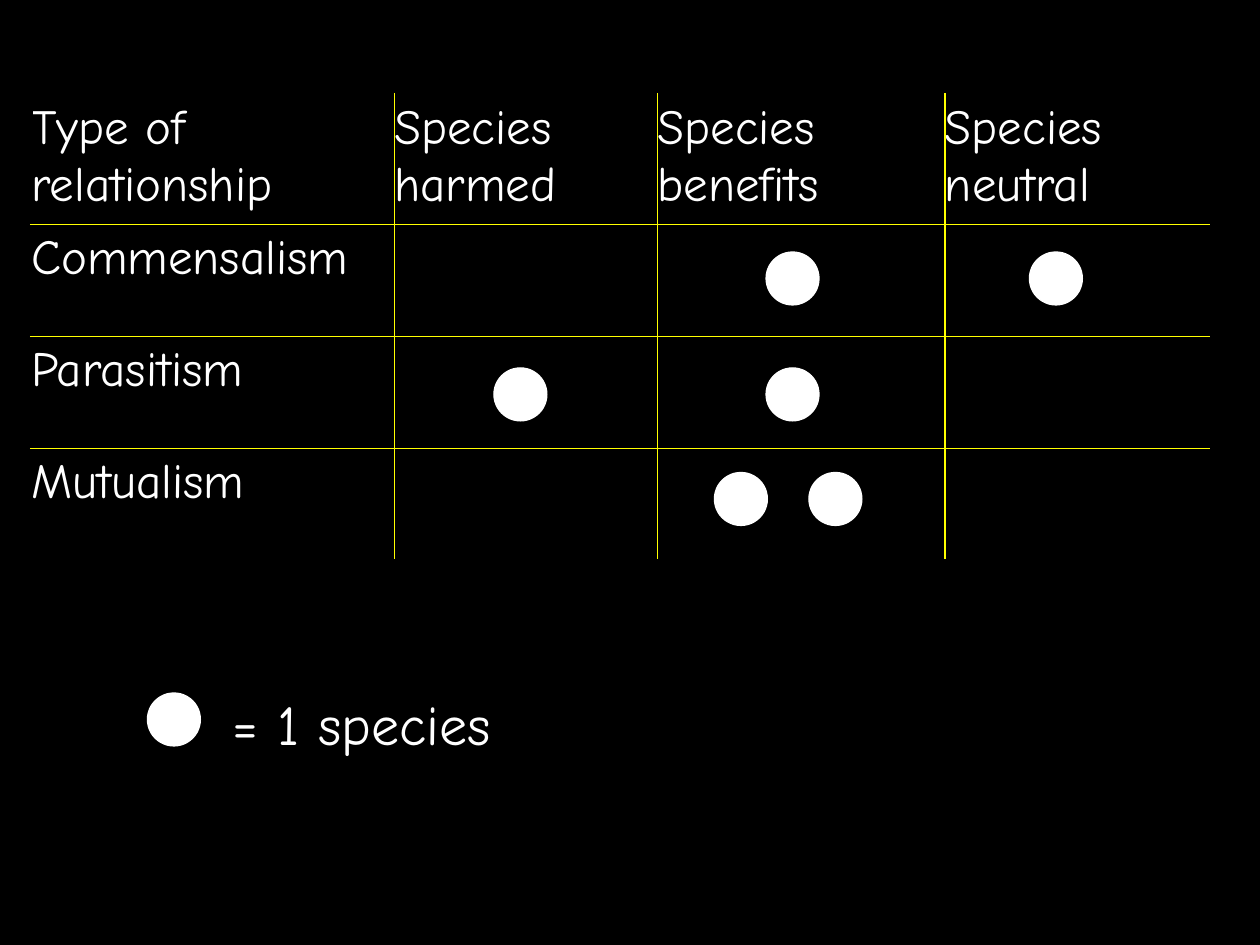
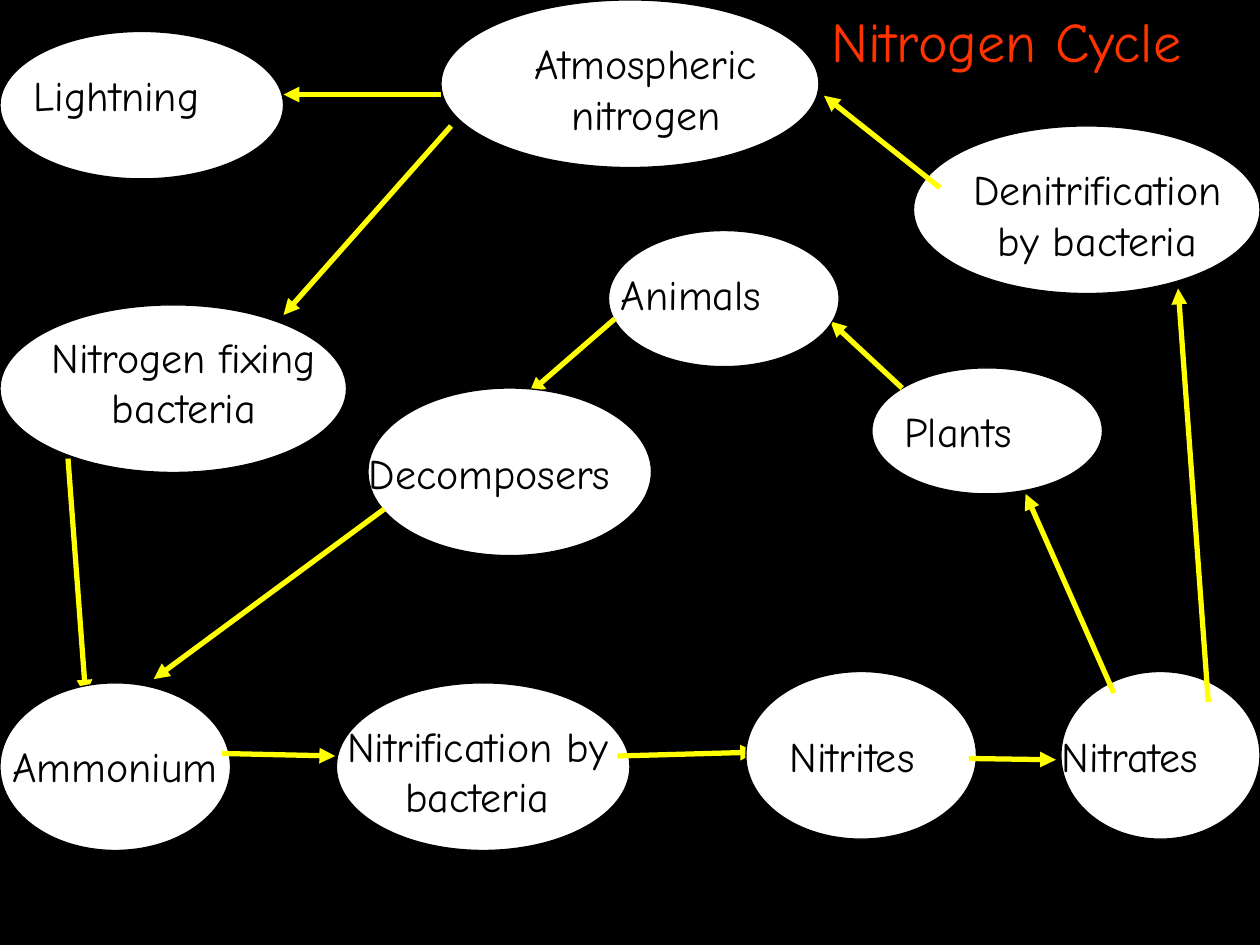
from lxml.etree import SubElement
from pptx import Presentation
from pptx.dml.color import RGBColor
from pptx.enum.shapes import MSO_CONNECTOR as CONNECTOR, MSO_SHAPE as SHAPE
from pptx.enum.text import PP_ALIGN as ALIGN
from pptx.oxml.ns import qn
from pptx.util import Inches, Pt

# Shared look
FONT = "Comic Neue"
BLACK, WHITE, YELLOW, RED = "000000", "FFFFFF", "FFFF00", "FF3300"
DOT_SIZE = 0.42

# Relationship table
COLUMN_WIDTHS = [2.88, 2.09, 2.28, 2.09]
ROW_HEIGHTS = [1.03, 0.89, 0.89, 0.89]
HEADINGS = ["Type of relationship", "Species harmed", "Species benefits", "Species neutral"]
RELATIONSHIPS = ["Commensalism", "Parasitism", "Mutualism"]
# Species dots, as offsets from the table corner
SPECIES_DOTS = [(5.83, 2.17), (3.67, 2.17), (6.17, 3), (5.42, 3), (5.83, 1.25), (7.92, 1.25)]

# Stages: name, oval box, label box relative to the oval, alignment, outgoing arrows
STAGES = [
    ("Atmospheric nitrogen", (3.5, 0, 3, 1.33), (0.5, 0.25, 2.25, 0.9), ALIGN.CENTER,
     [(3.58, 1, 2.25, 2.5), (3.5, 0.75, 2.25, 0.75)]),
    ("Lightning", (0, 0.25, 2.25, 1.17), (0.17, 0.25, 1.92, 0.5), ALIGN.LEFT, []),
    ("Nitrogen fixing bacteria", (0, 2.42, 2.75, 1.33), (0.17, 0.16, 2.58, 0.9), ALIGN.CENTER,
     [(0.54, 3.64, 0.68, 5.52)]),
    ("Ammonium", (0, 5.42, 1.83, 1.33), (0, 0.41, 2.17, 0.5), ALIGN.LEFT,
     [(1.76, 5.98, 2.66, 6)]),
    ("Nitrification by bacteria", (2.67, 5.42, 2.33, 1.33), (-0.17, 0.25, 2.58, 0.9), ALIGN.CENTER,
     [(4.9, 6, 6, 5.97)]),
    ("Nitrites", (5.92, 5.33, 1.83, 1.33), (0.25, 0.42, 1.5, 0.5), ALIGN.LEFT,
     [(7.69, 6.02, 8.38, 6.03)]),
    ("Nitrates", (8.42, 5.33, 1.58, 1.33), (-0.09, 0.42, 1.67, 0.5), ALIGN.LEFT,
     [(8.84, 5.5, 8.14, 3.92), (9.59, 5.57, 9.35, 2.29)]),
    ("Denitrification by bacteria", (7.25, 1, 2.75, 1.33), (0.17, 0.25, 2.58, 0.9), ALIGN.CENTER,
     [(7.46, 1.49, 6.54, 0.76)]),
    ("Plants", (6.92, 2.92, 1.83, 1), (0.16, 0.25, 1.5, 0.5), ALIGN.LEFT,
     [(7.16, 3.08, 6.59, 2.55)]),
    ("Animals", (4.83, 1.83, 1.83, 1.08), (0, 0.25, 1.5, 0.5), ALIGN.LEFT,
     [(4.88, 2.53, 4.2, 3.12)]),
    ("Decomposers", (2.92, 3.08, 2.25, 1.33), (-0.09, 0.42, 2.25, 0.5), ALIGN.LEFT,
     [(3.05, 4.04, 1.22, 5.39)]),
]


def rgb(value):
    return RGBColor.from_string(value)


def inches(values):
    return [Inches(value) for value in values]


def write(frame, text, size, color, align=ALIGN.LEFT):
    frame.word_wrap = True
    paragraph = frame.paragraphs[0]
    paragraph.alignment = align
    run = paragraph.add_run()
    run.text = text
    for name, value in {"name": FONT, "size": Pt(size), "bold": False}.items():
        setattr(run.font, name, value)
    run.font.color.rgb = rgb(color)


def add_label(slide, text, box, size, color, align=ALIGN.LEFT):
    write(slide.shapes.add_textbox(*inches(box)).text_frame, text, size, color, align)


def add_oval(slide, box, line_color):
    oval = slide.shapes.add_shape(SHAPE.OVAL, *inches(box))
    oval.shadow.inherit = False
    oval.fill.solid()
    oval.fill.fore_color.rgb = rgb(WHITE)
    oval.line.color.rgb = rgb(line_color)
    oval.line.width = Pt(0.75)


def add_dot(slide, left, top):
    add_oval(slide, (left, top, DOT_SIZE, DOT_SIZE), WHITE)


def add_arrow(slide, ends):
    arrow = slide.shapes.add_connector(CONNECTOR.STRAIGHT, *inches(ends))
    arrow.line.color.rgb = rgb(YELLOW)
    arrow.line.width = Pt(3)
    SubElement(arrow.line._get_or_add_ln(), qn("a:tailEnd"), type="triangle")
    SubElement(arrow._element.spPr, qn("a:effectLst"))


def set_borders(cell, outer_sides):
    """Black on the table's outer edge, yellow inside."""
    properties = cell._tc.get_or_add_tcPr()
    for side in "LRTB":
        color, width = (BLACK, 2.25) if side in outer_sides else (YELLOW, 1)
        line = SubElement(properties, qn(f"a:ln{side}"), w=str(Pt(width)))
        SubElement(SubElement(line, qn("a:solidFill")), qn("a:srgbClr"), val=color)


def add_relationship_table(slide, left, top):
    box = (left, top, sum(COLUMN_WIDTHS), sum(ROW_HEIGHTS))
    rows, columns = len(ROW_HEIGHTS), len(COLUMN_WIDTHS)
    table = slide.shapes.add_table(rows, columns, *inches(box)).table
    table.first_row = table.horz_banding = False
    for column, width in zip(table.columns, COLUMN_WIDTHS):
        column.width = Inches(width)
    for row, height in zip(table.rows, ROW_HEIGHTS):
        row.height = Inches(height)

    texts = [HEADINGS] + [[name] + [""] * (columns - 1) for name in RELATIONSHIPS]
    for i, row_texts in enumerate(texts):
        for j, text in enumerate(row_texts):
            cell = table.cell(i, j)
            cell.margin_left = cell.margin_right = 0
            edges = {"L": j == 0, "R": j == columns - 1, "T": i == 0, "B": i == rows - 1}
            set_borders(cell, [side for side, outer in edges.items() if outer])
            cell.fill.background()
            if text:
                write(cell.text_frame, text, 28, WHITE)

    for x, y in SPECIES_DOTS:
        add_dot(slide, left + x, top + y)


def add_legend(slide, left, top):
    add_dot(slide, left, top + 0.08)
    add_label(slide, "= 1 species", (left + 0.58, top, 3.5, 0.63), 32, WHITE)


def add_stage(slide, name, box, label_box, align, arrows):
    left, top = box[:2]
    x, y, width, height = label_box
    add_oval(slide, box, BLACK)
    add_label(slide, name, (left + x, top + y, width, height), 24, BLACK, align)
    for ends in arrows:
        add_arrow(slide, ends)


def new_slide(presentation):
    slide = presentation.slides.add_slide(presentation.slide_layouts[6])
    slide.background.fill.solid()
    slide.background.fill.fore_color.rgb = rgb(BLACK)
    return slide


def build_relationships(presentation):
    slide = new_slide(presentation)
    add_relationship_table(slide, 0.25, 0.75)
    add_legend(slide, 1.17, 5.42)


def build_nitrogen_cycle(presentation):
    slide = new_slide(presentation)
    for stage in STAGES:
        add_stage(slide, *stage)
    add_label(slide, "Nitrogen Cycle", (6.5, 0, 3.5, 0.63), 32, RED)


def main():
    presentation = Presentation()
    presentation.slide_width, presentation.slide_height = inches((10, 7.5))
    build_relationships(presentation)
    build_nitrogen_cycle(presentation)
    presentation.save("out.pptx")


if __name__ == "__main__":
    main()
